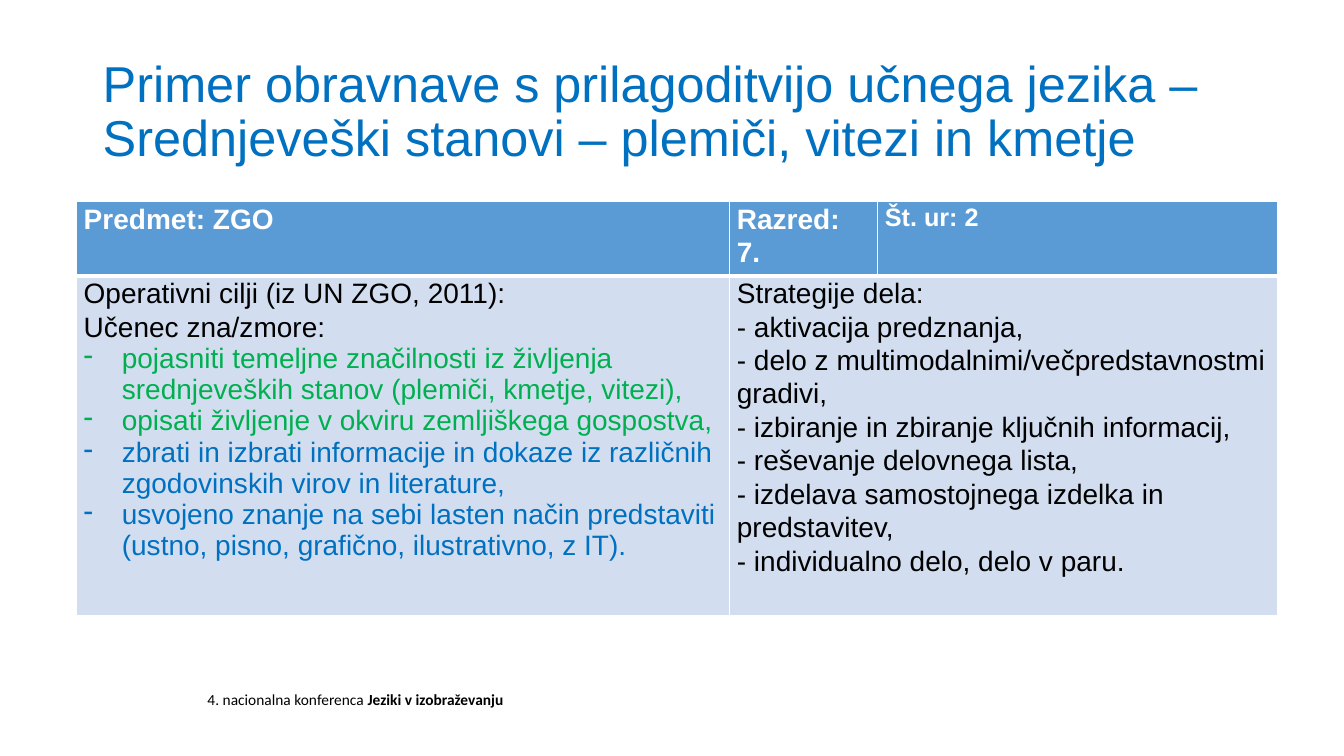
from dataclasses import dataclass

from lxml import etree
from pptx import Presentation
from pptx.dml.color import RGBColor
from pptx.enum import text as text_enum
from pptx.oxml import ns
from pptx.util import Cm, Pt

WHITE = RGBColor(0xFF, 0xFF, 0xFF)
BLACK = RGBColor(0x00, 0x00, 0x00)
BLUE = RGBColor(0x00, 0x70, 0xC0)
GREEN = RGBColor(0x00, 0xB0, 0x50)
HEADER_FILL = RGBColor(0x5B, 0x9B, 0xD5)
BODY_FILL = RGBColor(0xD2, 0xDE, 0xEF)

COLUMN_WIDTHS = (16.46, 3.73, 10.08)
ROW_HEIGHTS = (1.88, 8.56)
HANGING_INDENT = Cm(0.96)


@dataclass(frozen=True)
class Line:
    text: str
    color: RGBColor = BLACK
    size: float = 20
    bold: bool = False
    bullet: bool = False


@dataclass(frozen=True)
class TableCell:
    row: int
    column: int
    fill: RGBColor
    lines: tuple[Line, ...]
    top_border: float = 1
    bottom_border: float = 1


def header_cell(column: int, label: str, size: float = 20) -> TableCell:
    line = Line(label, color=WHITE, size=size, bold=True)
    return TableCell(0, column, HEADER_FILL, (line,), bottom_border=3)


def body_cell(column: int, *lines: Line) -> TableCell:
    return TableCell(1, column, BODY_FILL, lines, top_border=3)


CELLS = (
    header_cell(0, "Predmet: ZGO"),
    header_cell(1, "Razred: 7."),
    header_cell(2, "Št. ur: 2", size=18),
    body_cell(
        0,
        Line("Operativni cilji (iz UN ZGO, 2011):"),
        Line("Učenec zna/zmore:"),
        Line("pojasniti temeljne značilnosti iz življenja srednjeveških stanov "
             "(plemiči, kmetje, vitezi),", GREEN, bullet=True),
        Line("opisati življenje v okviru zemljiškega gospostva,", GREEN, bullet=True),
        Line("zbrati in izbrati informacije in dokaze iz različnih "
             "zgodovinskih virov in literature,", BLUE, bullet=True),
        Line("usvojeno znanje na sebi lasten način predstaviti "
             "(ustno, pisno, grafično, ilustrativno, z IT).", BLUE, bullet=True),
    ),
    body_cell(
        1,
        Line("Strategije dela:"),
        Line("- aktivacija predznanja,"),
        Line("- delo z multimodalnimi/večpredstavnostmi gradivi,"),
        Line("- izbiranje in zbiranje ključnih informacij,"),
        Line("- reševanje delovnega lista,"),
        Line("- izdelava samostojnega izdelka in predstavitev,"),
        Line("- individualno delo, delo v paru."),
    ),
)


def add_text(paragraph, content: str, *, size: float, color: RGBColor,
             bold: bool = False, font: str = "Arial") -> None:
    run = paragraph.add_run()
    run.text = content
    run.font.name = font
    run.font.size = Pt(size)
    run.font.bold = bold
    run.font.color.rgb = color


def add_box(slide, left: float, top: float, width: float, height: float):
    shape = slide.shapes.add_textbox(Cm(left), Cm(top), Cm(width), Cm(height))
    shape.text_frame.word_wrap = True
    return shape.text_frame


def add_dash(paragraph) -> None:
    properties = paragraph._p.get_or_add_pPr()
    properties.set("marL", str(HANGING_INDENT))
    properties.set("indent", str(-HANGING_INDENT))
    etree.SubElement(properties, ns.qn("a:buFontTx"))
    etree.SubElement(properties, ns.qn("a:buChar")).set("char", "-")


def set_borders(cell, top: float, bottom: float) -> None:
    properties = cell._tc.get_or_add_tcPr()
    widths = {"a:lnL": 1, "a:lnR": 1, "a:lnT": top, "a:lnB": bottom}
    for position, (tag, width) in enumerate(widths.items()):
        border = etree.Element(ns.qn(tag), w=str(Pt(width)))
        fill = etree.SubElement(border, ns.qn("a:solidFill"))
        etree.SubElement(fill, ns.qn("a:srgbClr")).set("val", str(WHITE))
        properties.insert(position, border)


def fill_cell(table, content: TableCell) -> None:
    cell = table.cell(content.row, content.column)
    cell.margin_left = cell.margin_right = Cm(0.18)
    cell.margin_top = cell.margin_bottom = 0
    cell.fill.solid()
    cell.fill.fore_color.rgb = content.fill
    set_borders(cell, content.top_border, content.bottom_border)
    for index, line in enumerate(content.lines):
        frame = cell.text_frame
        paragraph = frame.add_paragraph() if index else frame.paragraphs[0]
        if line.bullet:
            add_dash(paragraph)
        else:
            paragraph.line_spacing = 1.07
        add_text(paragraph, line.text, size=line.size, color=line.color, bold=line.bold)


def add_title(slide) -> None:
    frame = add_box(slide, 2.34, 1.02, 29.21, 3.68)
    frame.vertical_anchor = text_enum.MSO_ANCHOR.MIDDLE
    paragraph = frame.paragraphs[0]
    paragraph.line_spacing = 0.9
    add_text(paragraph, "Primer obravnave s prilagoditvijo učnega jezika – ",
             size=36, color=BLUE)
    paragraph.add_line_break()
    add_text(paragraph, "Srednjeveški stanovi – plemiči, vitezi in kmetje",
             size=36, color=BLUE)


def add_lesson_table(slide) -> None:
    table = slide.shapes.add_table(
        len(ROW_HEIGHTS), len(COLUMN_WIDTHS), Cm(1.93), Cm(5.08),
        Cm(sum(COLUMN_WIDTHS)), Cm(sum(ROW_HEIGHTS))).table
    table.horz_banding = False
    for column, width in zip(table.columns, COLUMN_WIDTHS):
        column.width = Cm(width)
    for row, height in zip(table.rows, ROW_HEIGHTS):
        row.height = Cm(height)
    table.cell(1, 1).merge(table.cell(1, 2))
    for content in CELLS:
        fill_cell(table, content)


def add_footer(slide) -> None:
    frame = add_box(slide, 4.98, 17.27, 8.64, 0.74)
    paragraph = frame.paragraphs[0]
    for content, bold in (("4. nacionalna konferenca ", False),
                          ("Jeziki v izobraževanju", True)):
        add_text(paragraph, content, size=11, color=BLACK, bold=bold, font="Calibri")


def main() -> None:
    presentation = Presentation()
    presentation.slide_width = Cm(33.87)
    presentation.slide_height = Cm(19.05)
    slide = presentation.slides.add_slide(presentation.slide_layouts[6])
    add_footer(slide)
    add_title(slide)
    add_lesson_table(slide)
    presentation.save("out.pptx")


if __name__ == "__main__":
    main()
